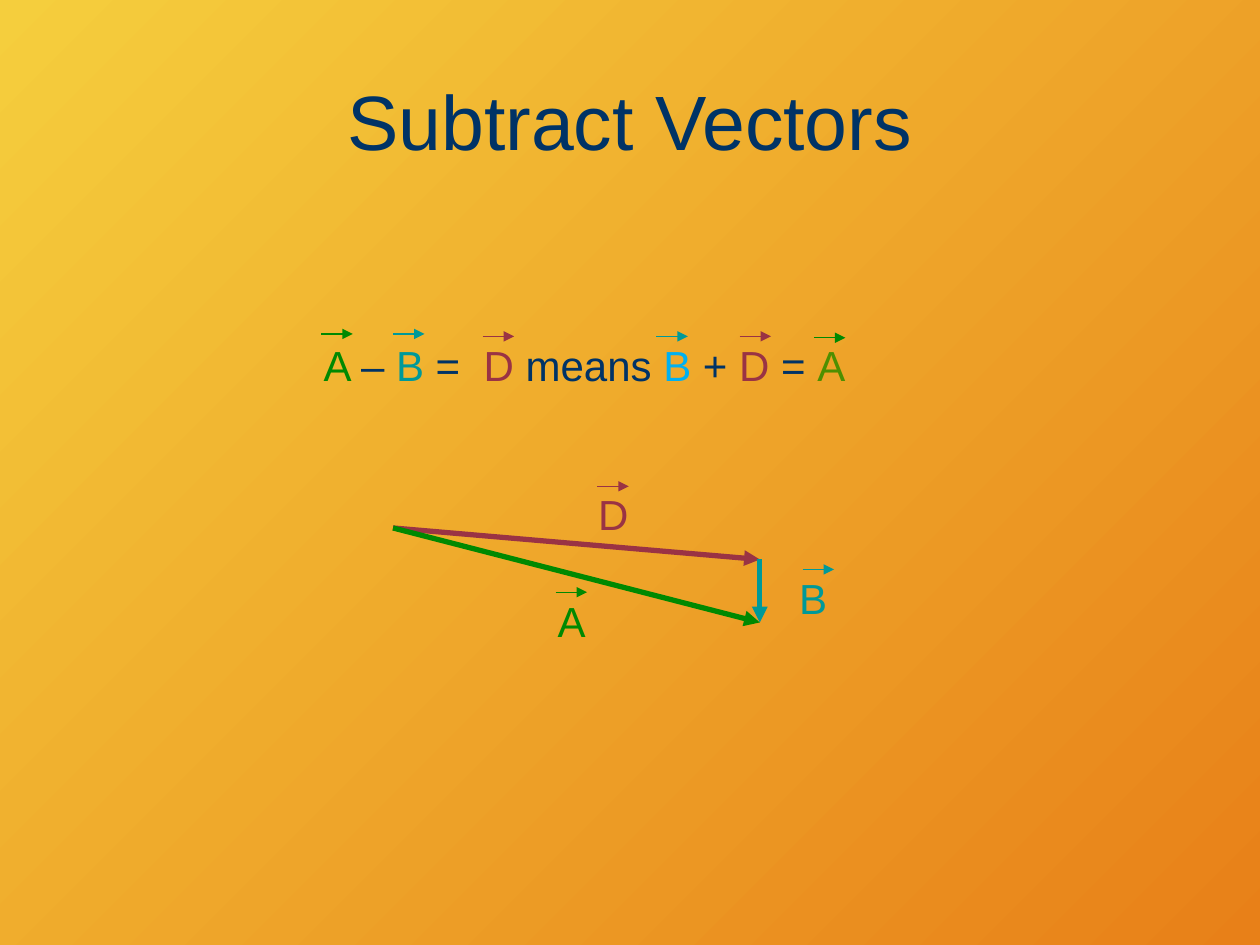
from dataclasses import dataclass

from lxml.etree import SubElement
from pptx import Presentation
from pptx.dml.color import RGBColor as Color
from pptx.enum.shapes import MSO_CONNECTOR as Connector
from pptx.enum.text import MSO_ANCHOR as Anchor, PP_ALIGN as Align
from pptx.oxml.ns import qn
from pptx.util import Pt


@dataclass(frozen=True)
class Theme:
    font: str = "Arial"
    title_size: int = 44
    label_size: int = 24
    thin: float = 0.75
    thick: float = 3
    navy: str = "003366"
    green: str = "008901"
    olive: str = "4E8F00"
    teal: str = "009999"
    sky: str = "00B0F0"
    red: str = "9A3344"
    background: tuple = ("F5CE3D", "E88018")


def apply(target, values):
    for name, value in values.items():
        setattr(target, name, value)


class VectorSlide:
    mark_length = 18
    label_height = 28.8

    def __init__(self, presentation, theme):
        self.theme = theme
        self.slide = presentation.slides.add_slide(presentation.slide_layouts[6])

    def background(self):
        fill = self.slide.background.fill
        fill.gradient()
        fill.gradient_angle = 315
        for position, (stop, color) in enumerate(
                zip(fill.gradient_stops, self.theme.background)):
            stop.position = position
            stop.color.rgb = Color.from_string(color)

    def text(self, box, runs, size, align=Align.CENTER, anchor=Anchor.TOP, top_inset=0):
        shape = self.slide.shapes.add_textbox(*map(Pt, box))
        apply(shape.text_frame, {
            "word_wrap": True, "vertical_anchor": anchor,
            "margin_left": 0, "margin_right": 0,
            "margin_top": Pt(top_inset), "margin_bottom": 0,
        })
        paragraph = shape.text_frame.paragraphs[0]
        paragraph.alignment = align
        for words, color, *spacing in runs:
            run = paragraph.add_run()
            run.text = words
            apply(run.font, {"name": self.theme.font, "size": Pt(size)})
            run.font.color.rgb = Color.from_string(color)
            for points in spacing:
                run.font._element.set("spc", str(round(points * 100)))

    def label(self, box, runs, align=Align.CENTER):
        self.text((*box, self.label_height), runs, self.theme.label_size, align,
                  top_inset=2)

    def arrow(self, start, end, color, width):
        line = self.slide.shapes.add_connector(
            Connector.STRAIGHT, *map(Pt, (*start, *end)))
        line.line.width = Pt(width)
        line.line.color.rgb = Color.from_string(color)
        SubElement(line.line._get_or_add_ln(), qn("a:tailEnd"), type="triangle")
        SubElement(line._element.spPr, qn("a:effectLst"))

    def mark(self, left, top, color):
        self.arrow((left, top), (left + self.mark_length, top), color, self.theme.thin)

    def vector(self, start, end, name, color, label_box, mark_at):
        self.arrow(start, end, color, self.theme.thick)
        self.label(label_box, [(name, color)])
        self.mark(*mark_at, color)


def main():
    presentation = Presentation()
    apply(presentation, {"slide_width": Pt(720), "slide_height": Pt(540)})
    theme = Theme()
    slide = VectorSlide(presentation, theme)
    slide.background()
    slide.text((36, 21.6, 648, 90), [("Subtract Vectors", theme.navy)],
               theme.title_size, anchor=Anchor.MIDDLE, top_inset=3.6)

    slide.label((185, 192.2, 309.6), [
        ("A ", theme.green), ("– ", theme.navy), ("B ", theme.teal),
        ("= ", theme.navy, 3.33), ("D ", theme.red), ("means ", theme.navy),
        ("B ", theme.sky), ("+", theme.navy), (" D ", theme.red),
        ("= ", theme.navy), ("A", theme.olive),
    ], Align.LEFT)
    for left, top, color in (
        (183.6, 190.8, theme.green), (224.6, 190.8, theme.teal),
        (465.1, 193, theme.green), (375.1, 192.2, theme.teal),
        (275.8, 192.2, theme.red), (422.6, 192.2, theme.red),
    ):
        slide.mark(left, top, color)

    origin, difference_tip, sum_tip = (224.6, 301.7), (434.2, 319.7), (434.2, 355.7)
    slide.vector(origin, difference_tip, "D", theme.red,
                 (338.4, 277.2, 24), (341.3, 277.9))
    slide.vector(difference_tip, sum_tip, "B", theme.teal,
                 (440.6, 325.4, 48), (458.6, 325.4))
    slide.vector(origin, sum_tip, "A", theme.green,
                 (314.6, 338.4, 24), (317.5, 338.4))
    presentation.save("out.pptx")


if __name__ == "__main__":
    main()
